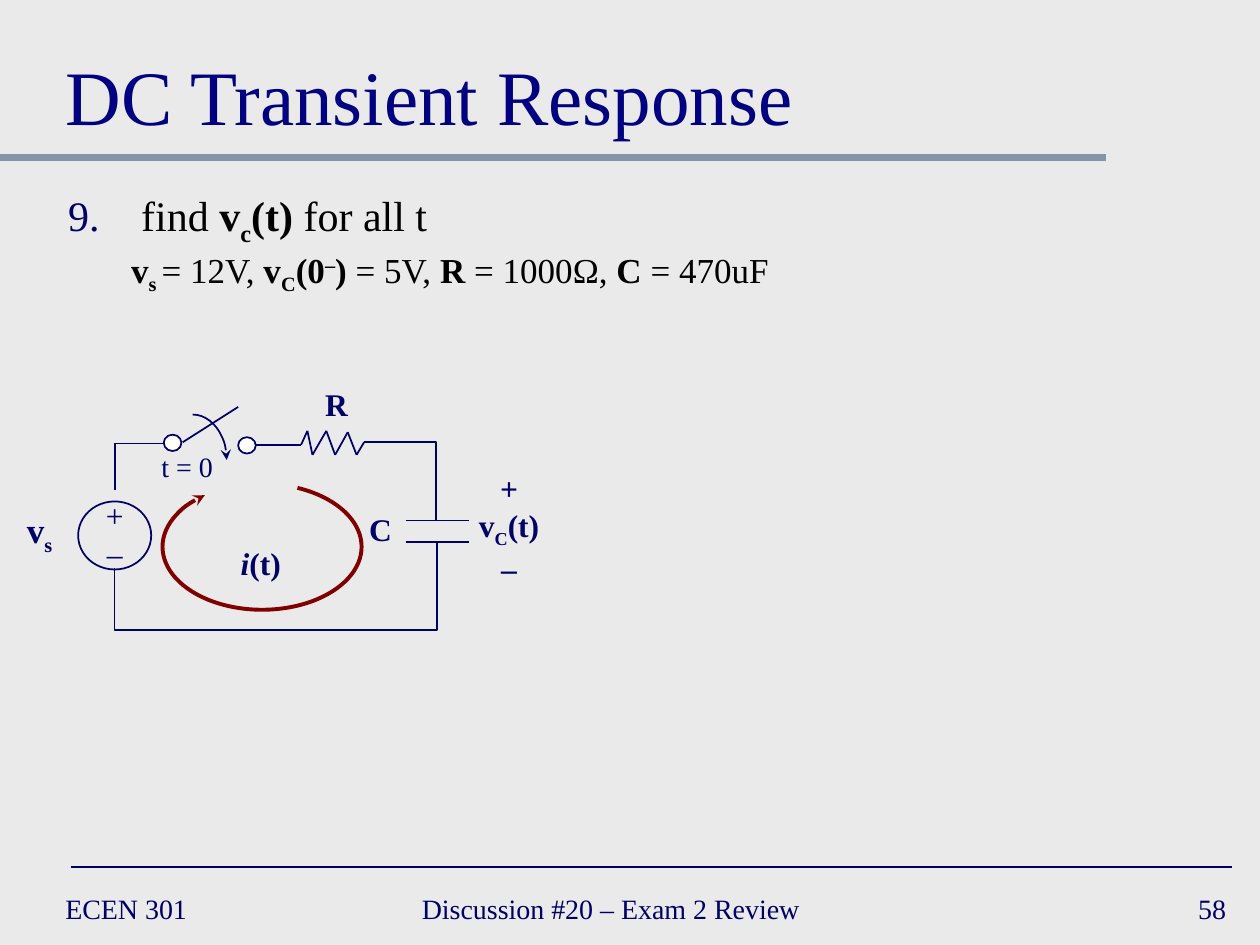
from dataclasses import dataclass
from itertools import pairwise

from lxml.etree import SubElement
from pptx import Presentation
from pptx.dml.color import RGBColor
from pptx.enum.shapes import MSO_CONNECTOR as Connector, MSO_SHAPE as Preset
from pptx.enum.text import MSO_ANCHOR as Anchor, MSO_AUTO_SIZE as AutoSize, PP_ALIGN as Align
from pptx.oxml.ns import qn
from pptx.util import Inches, Pt

FONT = "Times New Roman"
NAVY, TITLE_BLUE, RULE_GREY = "000066", "000080", "8495A9"
PAPER, WHITE, BLACK, MAROON = "EAEAEA", "FFFFFF", "000000", "800000"


@dataclass
class Grid:
    """Square cells of a tenth of an inch, counted from a corner in inches."""
    left: float = 0
    top: float = 0
    cell: float = 0.1

    def point(self, col, row):
        return Inches(self.left + col * self.cell), Inches(self.top + row * self.cell)

    def box(self, col, row, cols, rows):
        return *self.point(col, row), Inches(cols * self.cell), Inches(rows * self.cell)


def color(value):
    return RGBColor.from_string(value)


def set_font(para, size, ink):
    para.font.name, para.font.size = FONT, Pt(size)
    para.font.color.rgb = color(ink)


def add_spans(para, spans):
    """Each span is text and style: b bold, i italic, _ subscript, ^ superscript."""
    for text, style in spans:
        span = para.add_run()
        span.text = text
        if "b" in style:
            span.font.bold = True
        if "i" in style:
            span.font.italic = True
        for mark, shift in (("_", "-25000"), ("^", "30000")):
            if mark in style:
                span._r.get_or_add_rPr().set("baseline", shift)


def add_text(shapes, box, lines, size=18, align=Align.CENTER, anchor=Anchor.TOP):
    frame = shapes.add_textbox(*box).text_frame
    frame.word_wrap = False
    frame.vertical_anchor = anchor
    for index, spans in enumerate(lines):
        para = frame.add_paragraph() if index else frame.paragraphs[0]
        para.alignment = align
        set_font(para, size, NAVY)
        add_spans(para, spans)


def style_line(shape, ink=NAVY, width=1, arrow=False):
    shape.line.color.rgb = color(ink)
    shape.line.width = Pt(width)
    if arrow:
        SubElement(shape.line._get_or_add_ln(), qn("a:tailEnd"), type="stealth")


def add_line(shapes, start, end, ink=NAVY, width=1):
    line = shapes.add_connector(Connector.STRAIGHT, *start, *end)
    style_line(line, ink, width)
    SubElement(line._element.spPr, qn("a:effectLst"))


def add_wire(shapes, points):
    builder = shapes.build_freeform(*points[0])
    builder.add_line_segments(points[1:], close=False)
    wire = builder.convert_to_shape()
    wire.shadow.inherit = False
    wire.fill.background()
    style_line(wire)


def add_circle(shapes, box, fill=None):
    circle = shapes.add_shape(Preset.OVAL, *box)
    circle.shadow.inherit = False
    if fill:
        circle.fill.solid()
        circle.fill.fore_color.rgb = color(fill)
    else:
        circle.fill.background()
    style_line(circle)


def add_arc_arrow(shapes, box, start, end, ink=NAVY, width=1):
    """Clockwise arc between two angles in degrees, with an arrowhead at its end."""
    arc = shapes.add_shape(Preset.ARC, *box)
    arc.adjustments[0], arc.adjustments[1] = start * 0.6, end * 0.6
    arc.shadow.inherit = False
    arc.fill.background()
    style_line(arc, ink, width, arrow=True)


def place(holder, box, anchor):
    holder.left, holder.top, holder.width, holder.height = box
    frame = holder.text_frame
    frame.auto_size = AutoSize.NONE
    frame.word_wrap = True
    frame.vertical_anchor = anchor
    return frame


def fill_title(page, box):
    para = place(page.shapes.title, box, Anchor.BOTTOM).paragraphs[0]
    para.text = "DC Transient Response"
    para.alignment = Align.LEFT
    set_font(para, 44, TITLE_BLUE)


def set_indent(para, margin, indent):
    props = para._p.get_or_add_pPr()
    props.set("marL", str(Inches(margin)))
    props.set("indent", str(Inches(indent)))
    return props


def fill_problem(page, box):
    frame = place(page.placeholders[1], box, Anchor.TOP)
    question, values = frame.paragraphs[0], frame.add_paragraph()
    props = set_indent(question, 0.58, -0.58)
    SubElement(SubElement(props, qn("a:buClr")), qn("a:srgbClr"), val=NAVY)
    SubElement(props, qn("a:buAutoNum"), type="arabicPeriod", startAt="9")
    values.level = 1
    SubElement(set_indent(values, 1, -0.5), qn("a:buNone"))
    for para, size, gap in ((question, 24, 0), (values, 20, 4)):
        para.line_spacing = 0.9
        para.space_before = Pt(gap)
        set_font(para, size, BLACK)
    add_spans(question, [("find ", ""), ("v", "b"), ("c", "b_"), ("(t)", "b"),
                         (" for all t", "")])
    add_spans(values, [("v", "b"), ("s ", "b_"), ("= 12V,", ""), (" v", "b"), ("C", "b_"),
                       ("(0", "b"), ("–", "b^"), (") ", "b"), ("= 5V, ", ""), ("R", "b"),
                       (" = 1000Ω, ", ""), ("C ", "b"), ("= 470uF", "")])


def draw_circuit(page, grid):
    shapes = page.shapes.add_group_shape().shapes
    point, box = grid.point, grid.box

    for corners in ([(34.7, 13), (34.7, 20), (9.1, 20), (9.1, 15.1)],
                    [(34.6, 11.3), (34.6, 5.1), (28.9, 5.1)],
                    [(9.1, 8.9), (9.1, 5.2), (13, 5.2)]):
        add_wire(shapes, [point(*corner) for corner in corners])

    resistor = [(23.9, 5.3), (24.4, 4.2), (24.8, 6.1), (25.9, 4.2), (26.6, 6.1),
                (27.6, 4.3), (28.3, 6.1), (28.9, 5.1)]
    plates = [((32.2, row), (37.2, row)) for row in (11.3, 13)]
    switch = [((23.9, 5.3), (20.3, 5.3)), ((14.5, 5.1), (18.9, 2.3))]
    for start, end in [*pairwise(resistor), *plates, *switch]:
        add_line(shapes, point(*start), point(*end))

    add_circle(shapes, box(6.2, 9.8, 5.8, 5.4))
    for col, row in ((13, 4.5), (18.9, 4.7)):
        add_circle(shapes, box(col, row, 1.4, 1.3), WHITE)

    add_arc_arrow(shapes, box(12.6, 2.9, 5.4, 7.2), 270, 0)
    add_arc_arrow(shapes, box(12.9, 8.4, 15.8, 10), 301, 222, MAROON, 2.25)

    add_text(shapes, box(24.5, 0.1, 4.4, 4), [[("R", "b")]])
    add_text(shapes, box(28.3, 10, 3.8, 4), [[("C", "b")]])
    add_text(shapes, box(1.1, 9.9, 4.1, 4.3), [[("v", "b"), ("s", "b_")]], 20)
    add_text(shapes, box(7.4, 8.9, 3.4, 7), [[("+", "")], [("–", "")]])
    add_text(shapes, box(11.8, 5.2, 6.1, 3.7), [[("t = 0", "")]], 16)
    add_text(shapes, box(18.1, 12.7, 5.2, 4), [[("i", "bi"), ("(t)", "b")]])
    add_text(shapes, box(36.9, 6.7, 7, 10),
             [[("+", "b")], [("v", "b"), ("C", "b_"), ("(t)", "b")], [("–", "b")]])


def draw_footer(page, grid):
    add_line(page.shapes, grid.point(5.6, 0), grid.point(97.8, 0))
    for col, cols, text, align in ((4.2, 21.7, "ECEN 301", Align.LEFT),
                                   (32.5, 38.3, "Discussion #20 – Exam 2 Review", Align.LEFT),
                                   (77.5, 20.8, "58", Align.RIGHT)):
        add_text(page.shapes, grid.box(col, 1.2, cols, 4.2), [[(text, "")]], 16,
                 align, Anchor.MIDDLE)


def main():
    deck = Presentation()
    deck.slide_width, deck.slide_height = Inches(10), Inches(7.5)
    page = deck.slides.add_slide(deck.slide_layouts[1])
    page.background.fill.solid()
    page.background.fill.fore_color.rgb = color(PAPER)
    grid = Grid()
    add_line(page.shapes, grid.point(0, 12.5), grid.point(87.8, 12.5), RULE_GREY, 4)
    draw_footer(page, Grid(top=6.88))
    fill_title(page, grid.box(4.2, 1.7, 91.7, 10))
    fill_problem(page, grid.box(4.4, 14.6, 88.1, 11.2))
    draw_circuit(page, Grid(top=3))
    deck.save("out.pptx")


if __name__ == "__main__":
    main()
